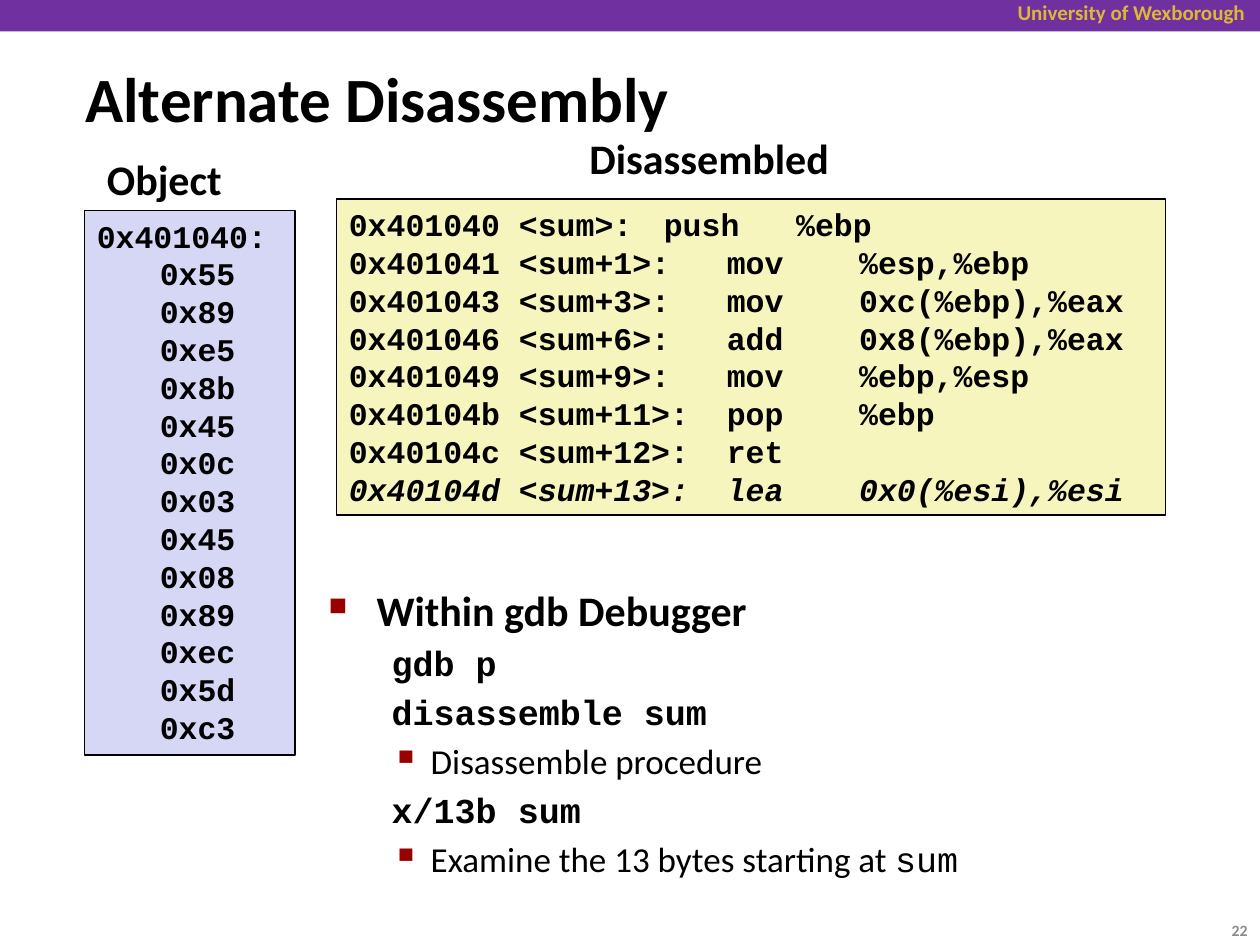
"""Builds a slide comparing object bytes with their disassembly in gdb."""
import lxml.etree
import pptx
import pptx.dml.color
import pptx.enum.shapes
import pptx.enum.text
import pptx.oxml.ns
import pptx.util
from pptx.util import Inches

COLORS = {
    "band": "7030A0",
    "gold": "DCB834",
    "black": "000000",
    "code": "F6F5BD",
    "bytes": "D6D6F5",
    "bullet": "990000",
    "number": "8C8C8C",
}
SANS, MONO = "Calibri", "Courier New"
ANCHOR = pptx.enum.text.MSO_ANCHOR
ALIGN = pptx.enum.text.PP_ALIGN

OBJECT_BYTES = "55 89 e5 8b 45 0c 03 45 08 89 ec 5d c3".split()
INSTRUCTIONS = [
    "0x401040 <sum>:\tpush   %ebp",
    "0x401041 <sum+1>:\tmov    %esp,%ebp",
    "0x401043 <sum+3>:\tmov    0xc(%ebp),%eax",
    "0x401046 <sum+6>:\tadd    0x8(%ebp),%eax",
    "0x401049 <sum+9>:\tmov    %ebp,%esp",
    "0x40104b <sum+11>:\tpop    %ebp",
    "0x40104c <sum+12>:\tret",
    "0x40104d <sum+13>:\tlea    0x0(%esi),%esi",
]


def rgb(name):
    """Return the named colour."""
    return pptx.dml.color.RGBColor.from_string(COLORS[name])


def add_property(parent, tag, **attributes):
    """Append a drawing element with the given attributes."""
    element = lxml.etree.SubElement(parent, pptx.oxml.ns.qn(f"a:{tag}"))
    for name, value in attributes.items():
        element.set(name, str(value))
    return element


def set_font(font, name, size, color="black", bold=True):
    """Set the face, size, colour and weight of a font."""
    font.name, font.size, font.bold = name, pptx.util.Pt(size), bold
    font.color.rgb = rgb(color)


def set_space_before(paragraph, percent):
    """Set the space before a paragraph relative to its line height."""
    space = add_property(paragraph._p.get_or_add_pPr(), "spcBef")
    add_property(space, "spcPct", val=percent * 1000)


def set_indent(paragraph, margin, hanging):
    """Give a paragraph a left margin and a hanging first line."""
    properties = paragraph._p.get_or_add_pPr()
    properties.set("marL", str(Inches(margin)))
    properties.set("indent", str(-Inches(hanging)))


def set_bullet(paragraph, character, percent):
    """Give a paragraph a coloured bullet."""
    properties = paragraph._p.get_or_add_pPr()
    color = add_property(properties, "buClr")
    add_property(color, "srgbClr", val=COLORS["bullet"])
    add_property(properties, "buSzPct", val=percent * 1000)
    add_property(properties, "buChar", char=character)


def add_rectangle(slide, bounds, fill, outlined=False):
    """Add a filled rectangle."""
    shape = slide.shapes.add_shape(
        pptx.enum.shapes.MSO_SHAPE.RECTANGLE, *map(Inches, bounds))
    shape.shadow.inherit = False
    shape.fill.solid()
    shape.fill.fore_color.rgb = rgb(fill)
    if outlined:
        shape.line.color.rgb = rgb("black")
        shape.line.width = pptx.util.Pt(1)
    else:
        shape.line.fill.background()
    return shape


def add_text_frame(slide, bounds, anchor=ANCHOR.TOP):
    """Add a wrapping text box and return its text frame."""
    frame = slide.shapes.add_textbox(*map(Inches, bounds)).text_frame
    frame.word_wrap = True
    frame.vertical_anchor = anchor
    return frame


def add_label(slide, bounds, text, size, color="black", bold=True,
              align=ALIGN.LEFT, anchor=ANCHOR.TOP, space=0):
    """Add a single line of sans text."""
    paragraph = add_text_frame(slide, bounds, anchor).paragraphs[0]
    paragraph.text = text
    paragraph.alignment = align
    if space:
        set_space_before(paragraph, space)
    set_font(paragraph.font, SANS, size, color, bold)


def add_code_box(slide, bounds, fill, lines):
    """Add an outlined box of code lines and return its paragraphs."""
    frame = add_rectangle(slide, bounds, fill, outlined=True).text_frame
    frame.word_wrap = True
    frame.vertical_anchor = ANCHOR.TOP
    frame.text = "\n".join(lines)
    for paragraph in frame.paragraphs:
        paragraph.alignment = ALIGN.LEFT
        tabs = add_property(paragraph._p.get_or_add_pPr(), "tabLst")
        for position in (0.5, 1.62):
            add_property(tabs, "tab", pos=Inches(position), algn="l")
        set_font(paragraph.font, MONO, 18)
    return frame.paragraphs


def add_debugger_notes(slide):
    """Add the list of gdb commands with their explanations."""
    frame = add_text_frame(slide, (2.51, 4.59, 6.89, 2.46))
    heading = frame.paragraphs[0]
    heading.text = "Within gdb Debugger"
    set_indent(heading, 0.38, 0.38)
    set_space_before(heading, 20)
    set_bullet(heading, "■", 60)
    set_font(heading.font, SANS, 24)

    notes = [
        ("gdb p", True),
        ("disassemble sum", True),
        ("Disassemble procedure", False),
        ("x/13b sum", True),
        ("Examine the 13 bytes starting at ", False),
    ]
    for text, is_command in notes:
        paragraph = frame.add_paragraph()
        paragraph.level = 1
        paragraph.add_run().text = text
        set_indent(paragraph, 0.81, 0.31)
        set_space_before(paragraph, 20)
        if not is_command:
            set_bullet(paragraph, "▪", 110)
        set_font(paragraph.font, MONO if is_command else SANS, 20,
                 bold=is_command)
    symbol = paragraph.add_run()
    symbol.text = "sum"
    symbol.font.name = MONO


def main():
    """Build and save the slide."""
    presentation = pptx.Presentation()
    presentation.slide_width = Inches(10)
    presentation.slide_height = Inches(7.5)
    slide = presentation.slides.add_slide(presentation.slide_layouts[6])

    add_rectangle(slide, (0, 0, 10, 0.25), "band")
    add_label(slide, (7.33, -0.05, 2.65, 0.3), "University of Wexborough", 12,
              "gold", align=ALIGN.RIGHT)
    add_label(slide, (4.58, 1, 2.85, 0.45), "Disassembled", 24, space=30)
    instructions = add_code_box(slide, (2.67, 1.58, 6.58, 2.51), "code",
                                INSTRUCTIONS)
    instructions[-1].font.italic = True
    add_label(slide, (0.58, 0.46, 6.83, 0.63), "Alternate Disassembly", 36,
              anchor=ANCHOR.MIDDLE)
    add_debugger_notes(slide)
    add_label(slide, (0.75, 1.17, 1.43, 0.45), "Object", 24, space=30)
    add_code_box(slide, (0.67, 1.67, 1.67, 4.32), "bytes",
                 ["0x401040:"] + [f"\t0x{byte}" for byte in OBJECT_BYTES])
    add_label(slide, (9.33, 7.18, 0.67, 0.4), "22", 9, "number",
              align=ALIGN.RIGHT, anchor=ANCHOR.MIDDLE)
    presentation.save("out.pptx")


if __name__ == "__main__":
    main()
